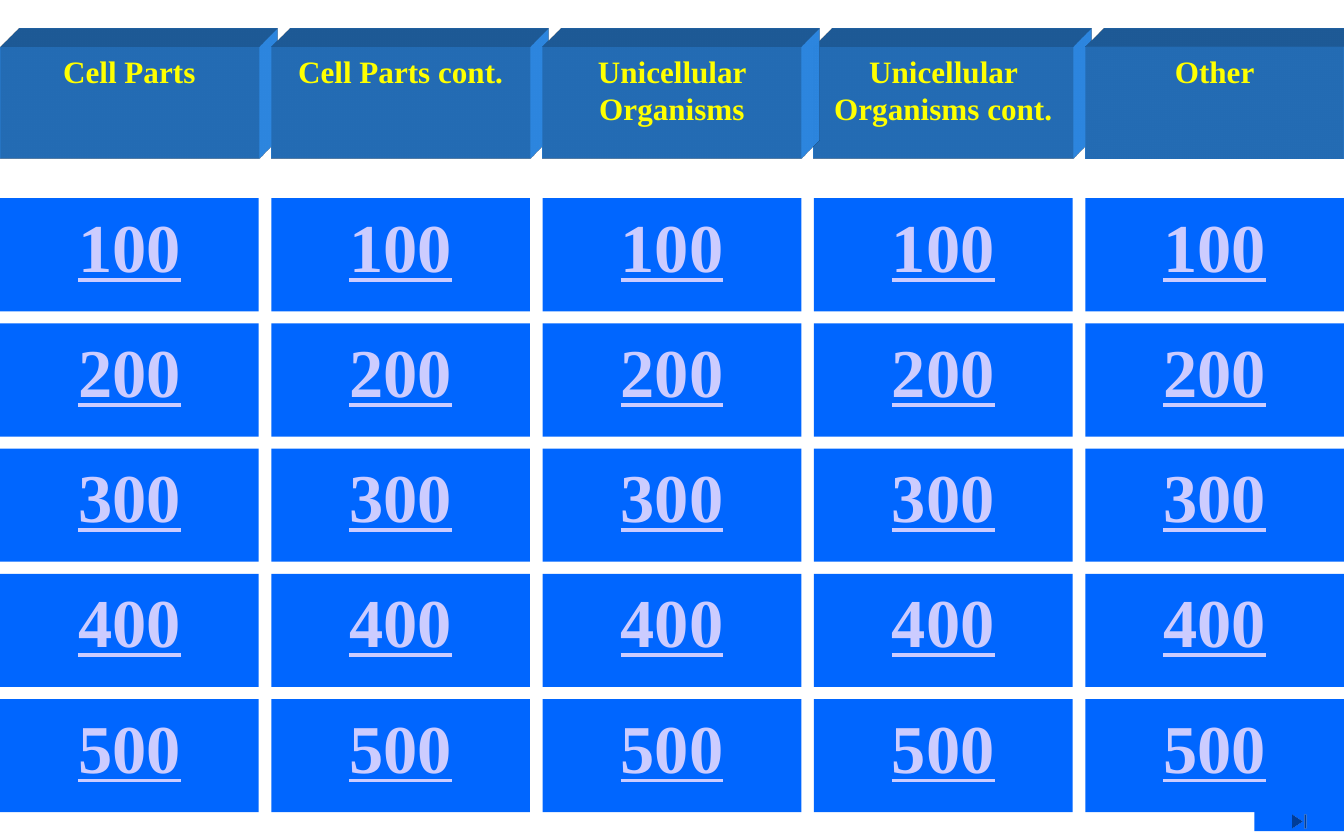
from lxml.etree import fromstring
from pptx import Presentation
from pptx.dml.color import RGBColor
from pptx.enum.shapes import MSO_SHAPE
from pptx.enum.text import MSO_ANCHOR, PP_ALIGN
from pptx.oxml.ns import nsdecls
from pptx.util import Inches, Pt

TOPICS = ["Cell Parts", "Cell Parts cont.", "Unicellular Organisms",
          "Unicellular Organisms cont.", "Other"]
ORDER = [0, 1, 3, 4, 2]
POINTS = [100, 200, 300, 400, 500]

SCENE = f"""<a:scene3d {nsdecls('a')}>
  <a:camera prst="legacyObliqueTopRight"/>
  <a:lightRig rig="legacyFlat3" dir="b"/>
</a:scene3d>"""
DEPTH = f"""<a:sp3d {nsdecls('a')} extrusionH="430200" prstMaterial="legacyMatte">
  <a:bevelT w="13500" h="13500" prst="angle"/>
  <a:bevelB w="13500" h="13500" prst="angle"/>
  <a:extrusionClr><a:srgbClr val="3399FF"/></a:extrusionClr>
</a:sp3d>"""


def paint(text):
    return RGBColor.from_string(text)


class Board:
    font = "Times New Roman"
    tile = "0066FF"
    score = "CCCCFF"
    head = "3399FF"
    label = "FFFF00"
    width, height = 2.31, 1.01
    across = (12 - width) / 4
    top, down = 1.77, 1.118

    def __init__(self, slide):
        self.slide = slide

    def shape(self, kind, left, top, width, height, fill):
        box = self.slide.shapes.add_shape(
            kind, Inches(left), Inches(top), Inches(width), Inches(height))
        box.shadow.inherit = False
        box.fill.solid()
        box.fill.fore_color.rgb = paint(fill)
        box.line.fill.background()
        return box

    def letter(self, box, text, size, color, under=False):
        frame = box.text_frame
        frame.text = text
        frame.word_wrap = True
        frame.vertical_anchor = MSO_ANCHOR.TOP
        line = frame.paragraphs[0]
        line.alignment = PP_ALIGN.CENTER
        font = line.runs[0].font
        font.name, font.size, font.bold = self.font, Pt(size), True
        font.underline = under
        font.color.rgb = paint(color)

    def value(self, col, row, points):
        box = self.shape(MSO_SHAPE.RECTANGLE, col * self.across,
                         self.top + row * self.down,
                         self.width, self.height, self.tile)
        self.letter(box, str(points), 44, self.score, True)

    def topic(self, col, text):
        box = self.shape(MSO_SHAPE.RECTANGLE, col * self.across, 0.42,
                         self.width, 1, self.head)
        for part in (SCENE, DEPTH):
            box.element.spPr.append(fromstring(part))
        self.letter(box, text, 20, self.label)

    def button(self):
        self.shape(MSO_SHAPE.ACTION_BUTTON_END, 11.2, 7.25, 0.8, 0.17, self.tile)


def main():
    deck = Presentation()
    deck.slide_width, deck.slide_height = Inches(12), Inches(7.5)
    board = Board(deck.slides.add_slide(deck.slide_layouts[6]))
    for row, points in enumerate(POINTS):
        for col in range(len(TOPICS)):
            board.value(col, row, points)
    for col in ORDER:
        board.topic(col, TOPICS[col])
    board.button()
    deck.save("out.pptx")


if __name__ == "__main__":
    main()
